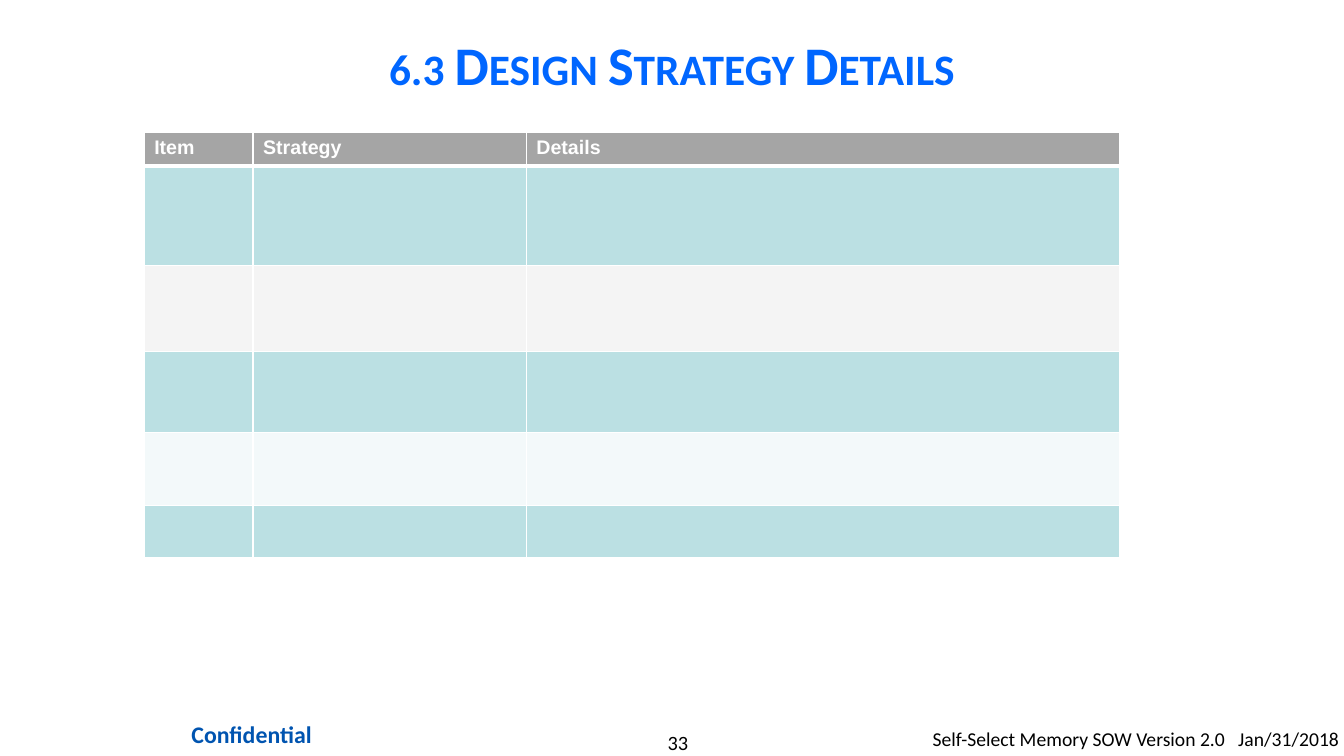
from dataclasses import dataclass, field

import lxml.etree
import pptx
import pptx.dml.color
import pptx.enum.text
import pptx.oxml.ns
import pptx.slide
import pptx.table
import pptx.text.text
import pptx.util

Inches = pptx.util.Inches
Align = pptx.enum.text.PP_ALIGN
Anchor = pptx.enum.text.MSO_ANCHOR
WHITE = "FFFFFF"
TEAL = "BBE0E3"


@dataclass
class Label:
    text: str
    box: tuple[float, float, float, float]
    color: str
    format: dict
    align: Align = Align.CENTER
    frame: dict = field(default_factory=dict)
    small_caps: bool = False
    tab: float = 0


@dataclass
class Row:
    height: float
    fill: str
    texts: tuple[str, ...] = ("", "", "")
    bottom_border: float = 1


def rgb(color: str) -> pptx.dml.color.RGBColor:
    return pptx.dml.color.RGBColor.from_string(color)


def set_all(target: object, values: dict) -> None:
    for name, value in values.items():
        setattr(target, name, value)


def insets(horizontal: float, vertical: float) -> dict:
    return {
        "margin_left": Inches(horizontal),
        "margin_right": Inches(horizontal),
        "margin_top": Inches(vertical),
        "margin_bottom": Inches(vertical),
    }


def type_style(size: float, bold: bool = False, name: str = "Calibri") -> dict:
    return {"size": pptx.util.Pt(size), "bold": bold, "name": name}


def add_xml(parent: lxml.etree._Element, tag: str, **attributes: str) -> lxml.etree._Element:
    return lxml.etree.SubElement(parent, pptx.oxml.ns.qn(tag), **attributes)


def write(paragraph: pptx.text.text._Paragraph, text: str, color: str, style: dict) -> None:
    paragraph.text = text
    for run in paragraph.runs:
        set_all(run.font, style)
        run.font.color.rgb = rgb(color)


def draw_label(slide: pptx.slide.Slide, label: Label) -> None:
    frame = slide.shapes.add_textbox(*map(Inches, label.box)).text_frame
    set_all(frame, {"word_wrap": True, **label.frame})
    paragraph = frame.paragraphs[0]
    paragraph.alignment = label.align
    if label.tab:
        tabs = add_xml(paragraph._p.get_or_add_pPr(), "a:tabLst")
        add_xml(tabs, "a:tab", pos=str(Inches(label.tab)), algn="l")
    write(paragraph, label.text, label.color, label.format)
    if label.small_caps:
        for run in paragraph.runs:
            run.font._element.set("cap", "small")


def draw_borders(cell: pptx.table._Cell, bottom: float, top: float) -> None:
    properties = cell._tc.get_or_add_tcPr()
    for side, width in {"L": 1, "R": 1, "T": top, "B": bottom}.items():
        line = add_xml(properties, f"a:ln{side}", w=str(pptx.util.Pt(width)))
        add_xml(add_xml(line, "a:solidFill"), "a:srgbClr", val=WHITE)


def draw_table(slide: pptx.slide.Slide, rows: list[Row], widths: list[float]) -> None:
    height = sum(row.height for row in rows)
    area = map(Inches, (1.43, 1.31, sum(widths), height))
    table = slide.shapes.add_table(len(rows), len(widths), *area).table
    for column, width in zip(table.columns, widths):
        column.width = Inches(width)
    border_above = 1
    for index, row in enumerate(rows):
        table.rows[index].height = Inches(row.height)
        for cell, text in zip(table.rows[index].cells, row.texts):
            draw_borders(cell, row.bottom_border, border_above)
            cell.fill.solid()
            cell.fill.fore_color.rgb = rgb(row.fill)
            if text:
                write(cell.text_frame.paragraphs[0], text, WHITE, type_style(14, True, "Arial"))
        border_above = row.bottom_border


LABELS = [
    Label("33", (5.56, 7.24, 2.33, 0.24), "000000", type_style(14.5), frame=insets(0, 0)),
    Label("Confidential", (1.55, 7.08, 1.89, 0.41), "0054B0", type_style(17, True),
          frame=insets(0.12, 0.06)),
    Label("Self-Select Memory SOW Version 2.0\tJan/31/2018", (9.25, 7.16, 4.08, 0.34),
          "000000", type_style(14), Align.LEFT, insets(0, 0.05), tab=3.03),
    Label("6.3 Design Strategy Details", (1, 0.17, 11.33, 0.92), "0066FF",
          type_style(38.8, True), small_caps=True,
          frame={**insets(0.1, 0.05), "vertical_anchor": Anchor.MIDDLE}),
]

STRATEGY_ROWS = [
    Row(0.32, "A5A5A5", ("Item", "Strategy", "Details"), 3),
    Row(0.99, TEAL),
    Row(0.85, "F4F4F4"),
    Row(0.81, TEAL),
    Row(0.72, "F3F9FA"),
    Row(0.52, TEAL),
]


def main() -> None:
    presentation = pptx.Presentation()
    presentation.slide_width = Inches(13.33)
    presentation.slide_height = Inches(7.5)
    slide = presentation.slides.add_slide(presentation.slide_layouts[6])
    for label in LABELS:
        draw_label(slide, label)
    draw_table(slide, STRATEGY_ROWS, [1.08, 2.71, 5.88])
    presentation.save("out.pptx")


if __name__ == "__main__":
    main()
